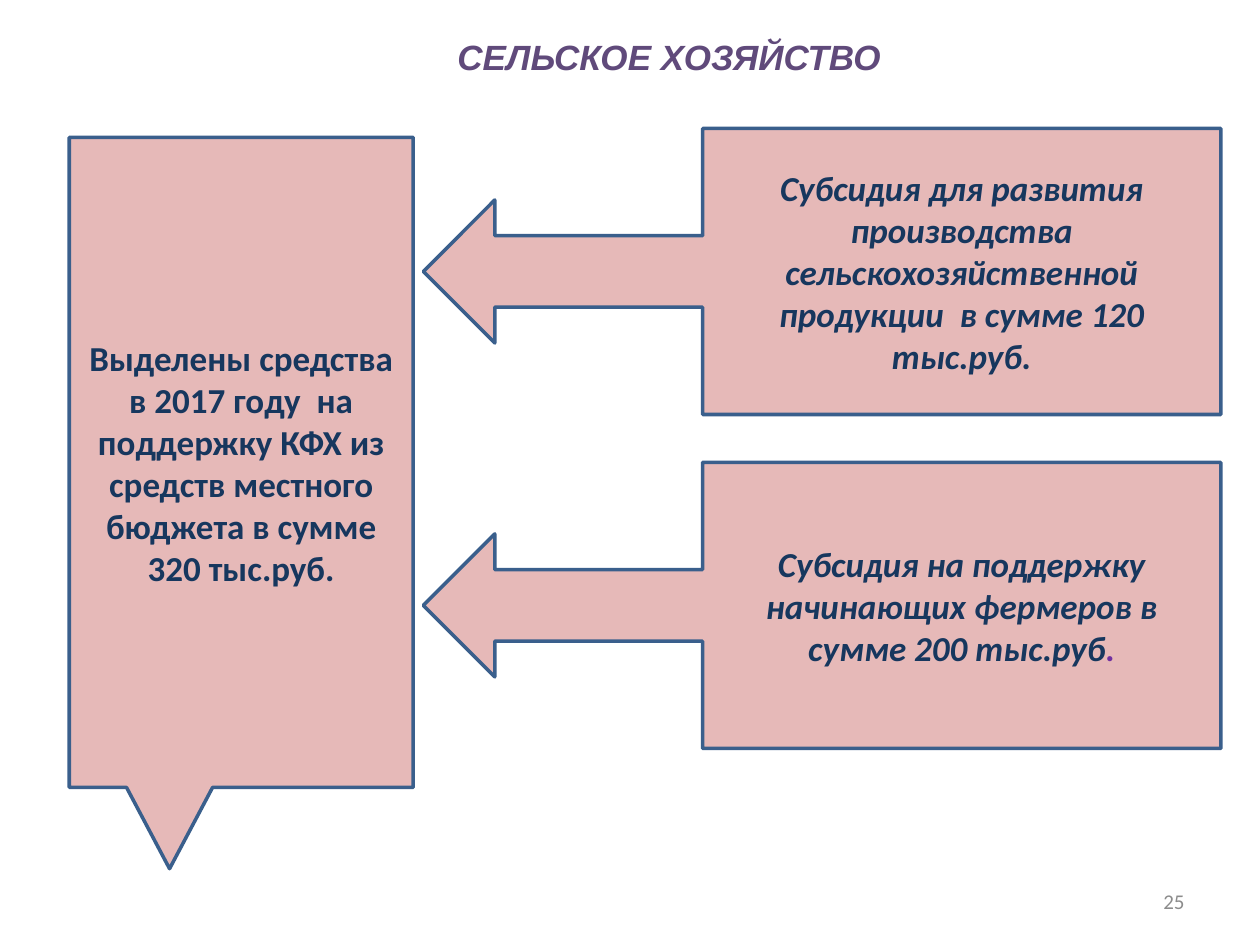
from pptx import Presentation
from pptx.dml.color import RGBColor
from pptx.enum.shapes import MSO_SHAPE as Shape
from pptx.enum.text import MSO_ANCHOR as Anchor, PP_ALIGN as Align
from pptx.util import Inches, Pt

PINK = RGBColor(0xE6, 0xB9, 0xB8)
BLUE = RGBColor(0x3A, 0x5F, 0x8C)
NAVY = RGBColor(0x17, 0x37, 0x5E)
PURPLE = RGBColor(0x60, 0x4A, 0x7B)
VIOLET = RGBColor(0x70, 0x30, 0xA0)
GRAY = RGBColor(0x8C, 0x8C, 0x8C)


def write(frame, runs, align=Align.CENTER, size=20, font="Calibri", bold=True, italic=False):
    frame.word_wrap = True
    frame.vertical_anchor = Anchor.MIDDLE
    paragraph = frame.paragraphs[0]
    paragraph.alignment = align
    for text, color in runs:
        run = paragraph.add_run()
        run.text = text
        run.font.name = font
        run.font.size = Pt(size)
        run.font.bold = bold
        run.font.italic = italic
        run.font.color.rgb = color


def add_title(slide, box, title):
    frame = slide.shapes.add_textbox(*map(Inches, box)).text_frame
    frame.margin_left = Inches(0.72)
    frame.margin_top = Inches(0.28)
    write(frame, [(title, PURPLE)], font="Arial", italic=True)


def add_callout(slide, box, outline, runs, italic=False):
    callout = slide.shapes.add_shape(outline, *map(Inches, box))
    callout.shadow.inherit = False
    callout.fill.solid()
    callout.fill.fore_color.rgb = PINK
    callout.line.color.rgb = BLUE
    callout.line.width = Pt(2)
    write(callout.text_frame, runs, italic=italic)


def add_subsidies(slide, box, subsidies, gap=0.38):
    left, top, width, height = box
    step = (height + gap) / len(subsidies)
    for index, runs in enumerate(subsidies):
        place = (left, top + index * step, width, step - gap)
        add_callout(slide, place, Shape.LEFT_ARROW_CALLOUT, runs, italic=True)


def add_page_number(slide, box, number):
    frame = slide.shapes.add_textbox(*map(Inches, box)).text_frame
    write(frame, [(number, GRAY)], align=Align.RIGHT, size=12, bold=False)


def main():
    deck = Presentation()
    deck.slide_width, deck.slide_height = Inches(10), Inches(7.5)
    slide = deck.slides.add_slide(deck.slide_layouts[6])
    add_page_number(slide, (7.17, 6.95, 2.33, 0.4), "25")
    add_title(slide, (0, 0, 10, 0.67), "СЕЛЬСКОЕ ХОЗЯЙСТВО")
    funding = ("Выделены средства в 2017 году  на поддержку КФХ "
               "из средств местного бюджета в сумме 320 тыс.руб.")
    add_callout(slide, (0.55, 1.09, 2.73, 5.16), Shape.RECTANGULAR_CALLOUT, [(funding, NAVY)])
    add_subsidies(slide, (3.36, 1.02, 6.33, 4.92), [
        [("Субсидия для развития производства сельскохозяйственной "
          "продукции  в сумме 120 тыс.руб.", NAVY)],
        [("Субсидия на поддержку начинающих фермеров в сумме 200 тыс.руб", NAVY), (".", VIOLET)],
    ])
    deck.save("out.pptx")


if __name__ == "__main__":
    main()
